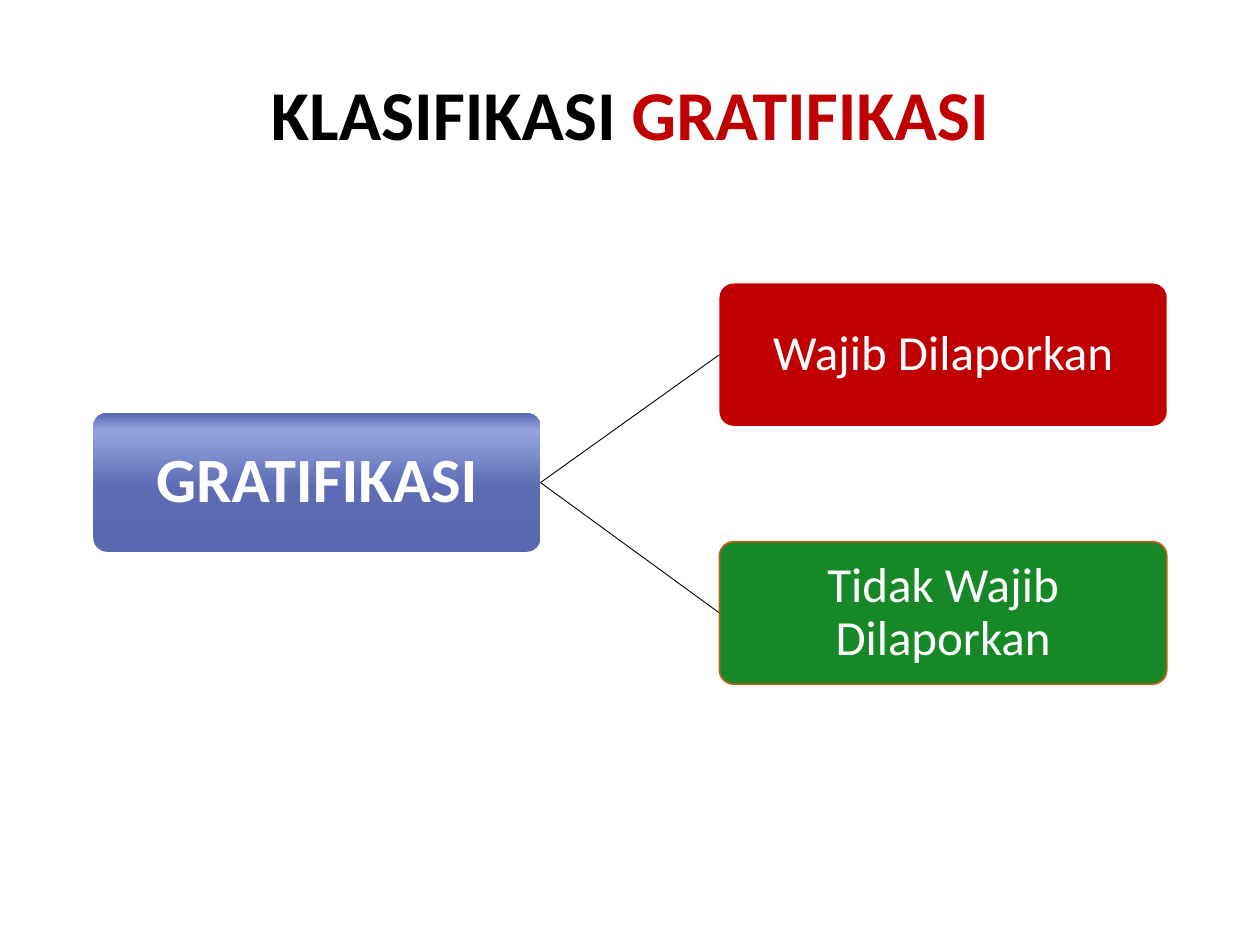
import copy

import lxml.etree
import pptx
import pptx.dml.color
import pptx.enum.shapes
import pptx.enum.text
import pptx.oxml.ns
import pptx.util

Inches, Pt = pptx.util.Inches, pptx.util.Pt
RGB = pptx.dml.color.RGBColor.from_string
SHAPE = pptx.enum.shapes.MSO_SHAPE
qn = pptx.oxml.ns.qn

THEME = {
    "font": "Calibri",
    "black": "000000", "white": "FFFFFF",
    "red": "C00000", "green": "178827", "orange": "BD5F18",
    "blues": [(0, "5968B0"), (0.45, "5C6BB3"), (0.88, "95A4DE"), (1, "5968B0")],
    "title_size": 40, "root_size": 36, "branch_size": 28,
}

# Content
TITLE = [("KLASIFIKASI ", "black"), ("GRATIFIKASI", "red")]
ROOT = "GRATIFIKASI"
BRANCHES = [  # text, fill, outline
    ("Wajib Dilaporkan", "red", None),
    ("Tidak Wajib Dilaporkan", "green", "orange"),
]

# Layout in inches
BOX_WIDTH = 3.55
ROOT_LEFT, ROOT_TOP, ROOT_HEIGHT = 0.74, 3.28, 1.1
BRANCH_LEFT, BRANCH_TOP, BRANCH_HEIGHT, BRANCH_STEP = 5.71, 2.25, 1.13, 2.05


def style(paragraph, size, bold):
    paragraph.alignment = pptx.enum.text.PP_ALIGN.CENTER
    paragraph.font.name = THEME["font"]
    paragraph.font.size = Pt(size)
    paragraph.font.bold = bold


def add_box(slide, text, left, top, height, size, inset, bold=False):
    box = slide.shapes.add_shape(SHAPE.ROUNDED_RECTANGLE, Inches(left), Inches(top),
                                 Inches(BOX_WIDTH), Inches(height))
    box.adjustments[0] = 0.1
    box.shadow.inherit = False
    box.line.fill.background()
    frame = box.text_frame
    frame.word_wrap = True
    frame.vertical_anchor = pptx.enum.text.MSO_ANCHOR.MIDDLE
    frame.margin_left = frame.margin_right = Inches(inset)
    frame.margin_top = frame.margin_bottom = Inches(inset)
    frame.text = text
    paragraph = frame.paragraphs[0]
    style(paragraph, size, bold)
    paragraph.line_spacing = 0.9
    paragraph.font.color.rgb = RGB(THEME["white"])
    return box


def fill_gradient(box, stops):
    box.fill.gradient()
    box.fill.gradient_angle = 90
    stop_list = next(box.element.iter(qn("a:gsLst")))
    while len(stop_list) < len(stops):
        stop_list.append(copy.deepcopy(stop_list[0]))
    for stop, (position, color) in zip(box.fill.gradient_stops, stops):
        stop.position = position
        stop.color.rgb = RGB(color)


def add_link(slide, start_x, start_y, end_x, end_y):
    link = slide.shapes.add_connector(
        pptx.enum.shapes.MSO_CONNECTOR.STRAIGHT,
        Inches(start_x), Inches(start_y), Inches(end_x), Inches(end_y))
    link.line.color.rgb = RGB(THEME["black"])
    link.line.width = Pt(0.5)
    lxml.etree.SubElement(link.element.spPr, qn("a:effectLst"))


def main():
    deck = pptx.Presentation()
    deck.slide_width, deck.slide_height = Inches(10), Inches(7.5)
    slide = deck.slides.add_slide(deck.slide_layouts[6])

    # Title
    title = slide.shapes.add_textbox(0, Inches(0.51), deck.slide_width, Inches(0.77))
    title.text_frame.word_wrap = True
    title.text_frame.vertical_anchor = pptx.enum.text.MSO_ANCHOR.MIDDLE
    heading = title.text_frame.paragraphs[0]
    style(heading, THEME["title_size"], True)
    for words, color in TITLE:
        run = heading.add_run()
        run.text = words
        run.font.color.rgb = RGB(THEME[color])

    # Root of the tree
    root = add_box(slide, ROOT, ROOT_LEFT, ROOT_TOP, ROOT_HEIGHT,
                   THEME["root_size"], 0.03, bold=True)
    fill_gradient(root, THEME["blues"])

    # Branches, each linked to the root
    for index, (text, fill, outline) in enumerate(BRANCHES):
        top = BRANCH_TOP + index * BRANCH_STEP
        add_link(slide, ROOT_LEFT + BOX_WIDTH, ROOT_TOP + ROOT_HEIGHT / 2,
                 BRANCH_LEFT, top + BRANCH_HEIGHT / 2)
        branch = add_box(slide, text, BRANCH_LEFT, top, BRANCH_HEIGHT,
                         THEME["branch_size"], 0.02)
        branch.fill.solid()
        branch.fill.fore_color.rgb = RGB(THEME[fill])
        if outline:
            branch.line.color.rgb = RGB(THEME[outline])
            branch.line.width = Pt(1)

    deck.save("out.pptx")


if __name__ == "__main__":
    main()
